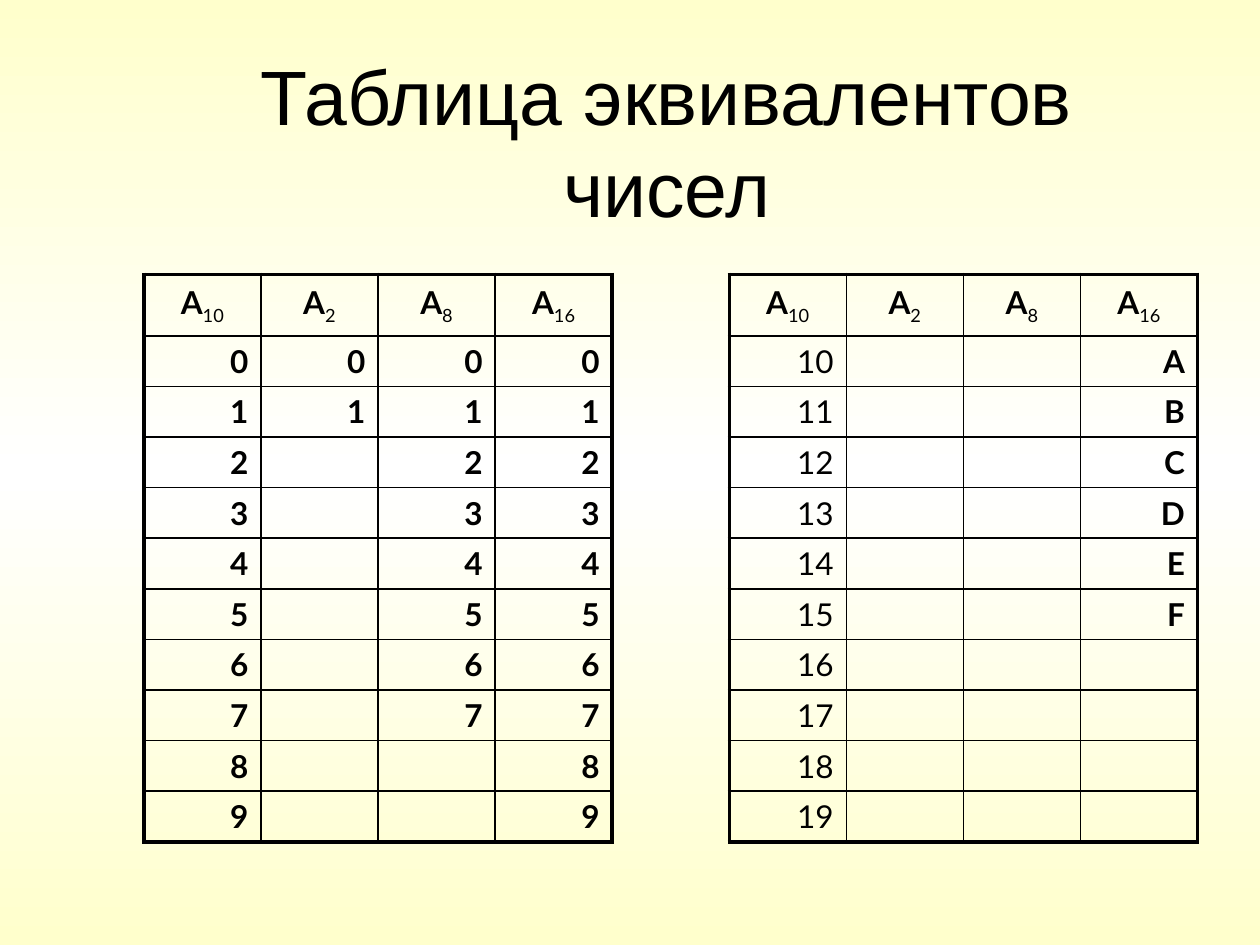
from copy import deepcopy

from lxml import etree
from pptx import Presentation
from pptx.dml.color import RGBColor
from pptx.enum.text import MSO_ANCHOR, PP_ALIGN
from pptx.oxml.ns import qn
from pptx.util import Cm, Pt

CENTER, RIGHT = PP_ALIGN.CENTER, PP_ALIGN.RIGHT
TOP, MIDDLE = MSO_ANCHOR.TOP, MSO_ANCHOR.MIDDLE
BLACK = RGBColor(0x00, 0x00, 0x00)
WHITE = RGBColor(0xFF, 0xFF, 0xFF)
CREAM = RGBColor(0xFF, 0xFF, 0xCC)
TITLE_ONLY = 5

BASES = ["10", "2", "8", "16"]
GAP_COL = len(BASES)
COL_COUNT = 2 * len(BASES) + 1
DIGITS = 10
THIN, THICK = 1, 2.25


class Deck:
    title_font, title_size = "Arial", Pt(44)
    table_font, table_size = "Lato", Pt(18)

    def __init__(self, prs):
        self.s = prs.slides.add_slide(prs.slide_layouts[TITLE_ONLY])

    def background(self, edge, middle):
        fill = self.s.background.fill
        fill.gradient()
        fill.gradient_angle = 270
        first = fill.gradient_stops[0]._gs
        first.addnext(deepcopy(first))
        stops = zip(fill.gradient_stops, (0, 0.5, 1), (edge, middle, edge))
        for stop, position, color in stops:
            stop.position = position
            stop.color.rgb = color

    def style(self, font, name, size, bold=False):
        font.name, font.size, font.bold = name, size, bold
        font.color.rgb = BLACK

    def title(self, text, left, top, width, height):
        sp = self.s.shapes.title
        sp.left, sp.top, sp.width, sp.height = left, top, width, height
        tf = sp.text_frame
        tf.text, tf.vertical_anchor = text, MIDDLE
        p = tf.paragraphs[0]
        p.alignment = CENTER
        self.style(p.font, self.title_font, self.title_size)

    def table(self, left, top, col_width, row_heights):
        table = self.s.shapes.add_table(
            len(row_heights), COL_COUNT, left, top,
            col_width * COL_COUNT, sum(row_heights)).table
        table.first_row = table.horz_banding = False
        for col in table.columns:
            col.width = col_width
        for row, height in zip(table.rows, row_heights):
            row.height = height
        return table

    def cell(self, cell, parts, align, anchor):
        """Write (text, bold, subscript) parts into a cell."""
        cell.fill.background()
        cell.vertical_anchor = anchor
        if not parts:
            cell.margin_top = cell.margin_bottom = 0
        p = cell.text_frame.paragraphs[0]
        p.alignment = align
        for text, bold, subscript in parts:
            r = p.add_run()
            r.text = text
            self.style(r.font, self.table_font, self.table_size, bold)
            if subscript:
                r.font._element.set("baseline", "-25000")

    def borders(self, cell, widths):
        """Draw left, right, top and bottom borders; a width of 0 means none."""
        tcPr = cell._tc.get_or_add_tcPr()
        for i, (side, width) in enumerate(zip("LRTB", widths)):
            ln = etree.Element(qn(f"a:ln{side}"), w=str(Pt(width)))
            tcPr.insert(i, ln)
            if width:
                fill = etree.SubElement(ln, qn("a:solidFill"))
                etree.SubElement(fill, qn("a:srgbClr"), val=str(BLACK))
            else:
                etree.SubElement(ln, qn("a:noFill"))


def cell_parts(row, col):
    if col == GAP_COL:
        return []
    right_half = col > GAP_COL
    base = BASES[col - GAP_COL - 1 if right_half else col]
    if row == 0:
        return [("A", True, False), (base, False, True)]
    number = row - 1 + (DIGITS if right_half else 0)
    # Only the decimal numbers and one-digit equivalents are given
    if base != "10" and number >= int(base):
        return []
    text = f"{number:X}" if base == "16" else str(number)
    return [(text, not (right_half and base == "10"), False)]


def border_widths(row, col):
    if col == GAP_COL:
        return THICK, THICK, 0, 0
    return (THICK if col in (0, GAP_COL + 1) else THIN,
            THICK if col in (GAP_COL - 1, COL_COUNT - 1) else THIN,
            THICK if row == 0 else THIN,
            THICK if row == DIGITS else THIN)


def main():
    prs = Presentation()
    prs.slide_width, prs.slide_height = Cm(25.4), Cm(19.05)
    deck = Deck(prs)
    deck.background(CREAM, WHITE)
    deck.title("Таблица эквивалентов чисел", Cm(2.97), Cm(0.84), Cm(20.95), Cm(3.99))
    table = deck.table(Cm(2.9), Cm(5.53), Cm(2.36), [Cm(1.24)] + [Cm(1.02)] * DIGITS)
    for row in range(DIGITS + 1):
        align, anchor = (RIGHT, TOP) if row else (CENTER, MIDDLE)
        for col in range(COL_COUNT):
            cell = table.cell(row, col)
            deck.cell(cell, cell_parts(row, col), align, anchor)
            deck.borders(cell, border_widths(row, col))
    prs.save("out.pptx")


if __name__ == "__main__":
    main()
